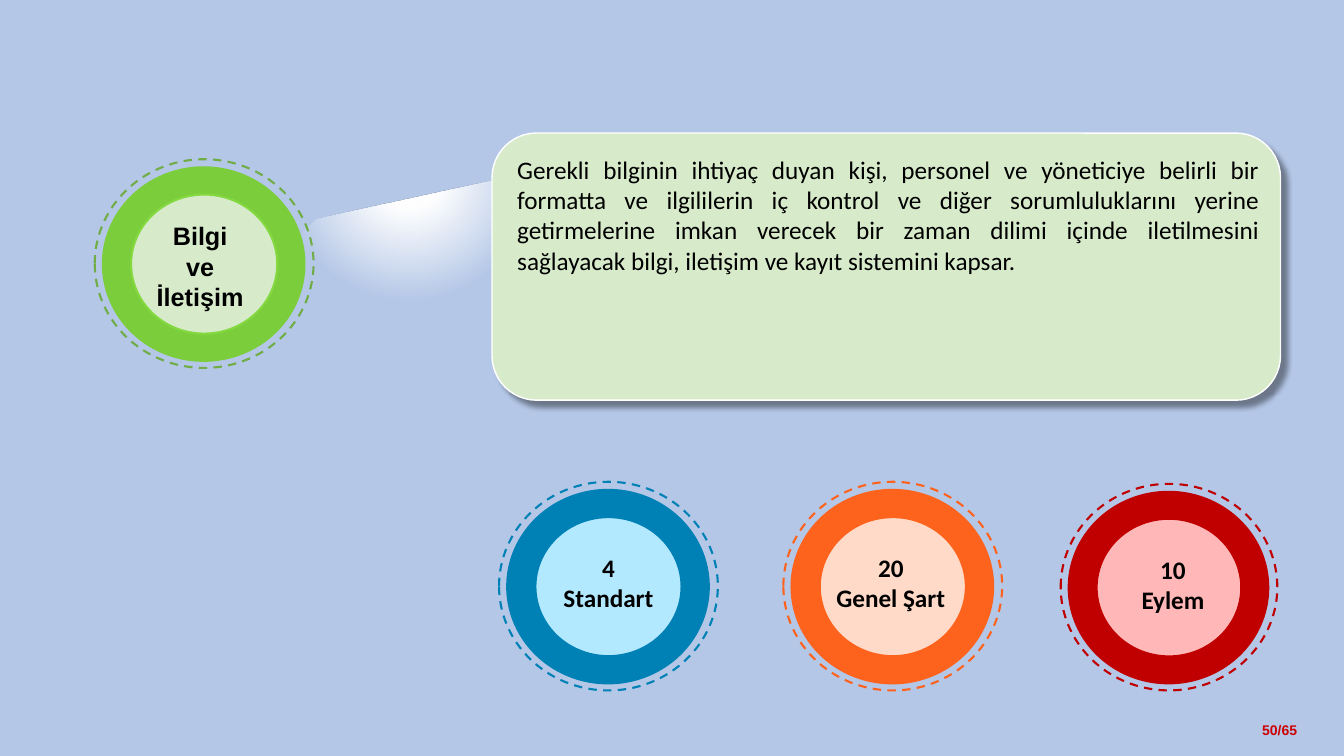
from lxml import etree
from pptx import Presentation
from pptx.dml.color import RGBColor
from pptx.enum.dml import MSO_LINE
from pptx.enum.shapes import MSO_SHAPE
from pptx.enum.text import MSO_ANCHOR, PP_ALIGN
from pptx.oxml.ns import qn
from pptx.util import Inches, Pt

COLORS = {
    "background": "B4C7E7",
    "panel": "D7EBCB",
    "white": "FFFFFF",
    "black": "000000",
    "page_number": "CC0000",
}
DEFINITION = (
    "Gerekli bilginin ihtiyaç duyan kişi, personel ve yöneticiye belirli bir "
    "formatta ve ilgililerin iç kontrol ve diğer sorumluluklarını yerine "
    "getirmelerine imkan verecek bir zaman dilimi içinde iletilmesini "
    "sağlayacak bilgi, iletişim ve kayıt sistemini kapsar."
)
BEAM_POINTS = [
    (5.15, 1.73), (5.15, 3.51), (3.14, 3.06), (3.0, 2.94),
    (2.95, 2.62), (3.0, 2.3), (3.14, 2.17),
]
DIALS = [
    {"left": 4.95, "top": 4.78, "size": 1, "ring": "0081B5", "dash": "0081B5",
     "core": "B3E9FF", "edge": "0081B5", "label": "4\nStandart",
     "label_at": (4.88, 5.43), "font": "Calibri"},
    {"left": 0.94, "top": 1.58, "size": 1, "ring": "7CCD3C", "dash": "70AD47",
     "core": "D7EBCB", "edge": "83D93F", "label": "Bilgi\nve\nİletişim",
     "label_at": (0.83, 2.14), "font": "Arial"},
    {"left": 7.77, "top": 4.78, "size": 1, "ring": "FE631D", "dash": "FE631D",
     "core": "FFDAC9", "edge": "FE631D", "label": "20\nGenel Şart",
     "label_at": (7.68, 5.43), "font": "Calibri"},
    {"left": 10.52, "top": 4.8, "size": 0.99, "ring": "C00000", "dash": "C00000",
     "core": "FFB7B7", "edge": "C00000", "label": "10\nEylem",
     "label_at": (10.49, 5.45), "font": "Calibri"},
]


def rgb(value):
    return RGBColor.from_string(value)


def paint(shape, fill=None, line=None, width=1.5):
    shape.shadow.inherit = False
    if fill:
        shape.fill.solid()
        shape.fill.fore_color.rgb = rgb(fill)
    else:
        shape.fill.background()
    if line:
        shape.line.color.rgb = rgb(line)
        shape.line.width = Pt(width)
    else:
        shape.line.fill.background()


def write(frame, text, font, size, color, align, bold=False):
    frame.text = text
    for para in frame.paragraphs:
        para.alignment = align
        for span in para.runs:
            span.font.name = font
            span.font.size = Pt(size)
            span.font.bold = bold
            span.font.color.rgb = rgb(color)


def add_child(parent, tag, **attributes):
    child = etree.SubElement(parent, qn(tag))
    for name, value in attributes.items():
        child.set(name, str(value))
    return child


def add_color(parent, color, alpha):
    node = add_child(parent, "a:srgbClr", val=color)
    add_child(node, "a:alpha", val=alpha * 1000)


def add_beam(page):
    points = [(Inches(x), Inches(y)) for x, y in BEAM_POINTS]
    builder = page.shapes.build_freeform(*points[0], scale=1.0)
    builder.add_line_segments(points[1:], close=True)
    beam = builder.convert_to_shape()
    paint(beam)
    beam.fill.gradient()
    gradient = beam._element.spPr.find(qn("a:gradFill"))
    for child in list(gradient):
        gradient.remove(child)
    stops = add_child(gradient, "a:gsLst")
    for position, alpha in ((24, 100), (89, 0)):
        stop = add_child(stops, "a:gs", pos=position * 1000)
        add_color(stop, COLORS["white"], alpha)
    circle = add_child(gradient, "a:path", path="circle")
    add_child(circle, "a:fillToRect", l=50000, t=-80000, r=50000, b=180000)


def add_panel(page):
    panel = page.shapes.add_shape(
        MSO_SHAPE.ROUNDED_RECTANGLE,
        Inches(4.88), Inches(1.32), Inches(7.82), Inches(2.65))
    paint(panel, COLORS["panel"], COLORS["white"], 1)
    effects = panel._element.spPr.find(qn("a:effectLst"))
    shadow = add_child(
        effects, "a:outerShdw", blurRad=Pt(4), dist=Pt(6), dir=50 * 60000,
        algn="tl", rotWithShape=0)
    add_color(shadow, COLORS["black"], 40)
    frame = panel.text_frame
    frame.word_wrap = True
    frame.vertical_anchor = MSO_ANCHOR.TOP
    frame.margin_left = Inches(0.12)
    frame.margin_right = frame.margin_top = Inches(0.08)
    frame.margin_bottom = Inches(0.25)
    write(frame, DEFINITION, "Calibri", 18, COLORS["black"], PP_ALIGN.JUSTIFY)


def add_dial(page, dial):
    group = page.shapes.add_group_shape()
    size = dial["size"]

    def add_circle(inset_x, inset_y, width, height):
        return group.shapes.add_shape(
            MSO_SHAPE.OVAL,
            Inches(dial["left"] + inset_x * size),
            Inches(dial["top"] + inset_y * size),
            Inches(width * size), Inches(height * size))

    paint(add_circle(0.07, 0.07, 2.02, 1.94), fill=dial["ring"])
    outline = add_circle(0, 0, 2.17, 2.07)
    paint(outline, line=dial["dash"])
    outline.line.dash_style = MSO_LINE.DASH
    paint(add_circle(0.36, 0.35, 1.45, 1.38), dial["core"], dial["edge"])

    left, top = dial["label_at"]
    lines = dial["label"].count("\n") + 1
    label = group.shapes.add_textbox(
        Inches(left), Inches(top),
        Inches(2.31 * size), Inches(0.1 + 0.3 * lines))
    label.text_frame.word_wrap = True
    write(label.text_frame, dial["label"], dial["font"], 18,
          COLORS["black"], PP_ALIGN.CENTER, bold=True)


def add_page_number(page):
    box = page.shapes.add_textbox(
        Inches(12.42), Inches(7.11), Inches(0.57), Inches(0.27))
    box.text_frame.word_wrap = False
    write(box.text_frame, "50/65", "Arial", 10, COLORS["page_number"],
          PP_ALIGN.LEFT, bold=True)


def main():
    deck = Presentation()
    deck.slide_width = Inches(13.33)
    deck.slide_height = Inches(7.5)
    page = deck.slides.add_slide(deck.slide_layouts[6])
    page.background.fill.solid()
    page.background.fill.fore_color.rgb = rgb(COLORS["background"])
    add_page_number(page)
    add_beam(page)
    add_panel(page)
    for dial in DIALS:
        add_dial(page, dial)
    deck.save("out.pptx")


if __name__ == "__main__":
    main()
